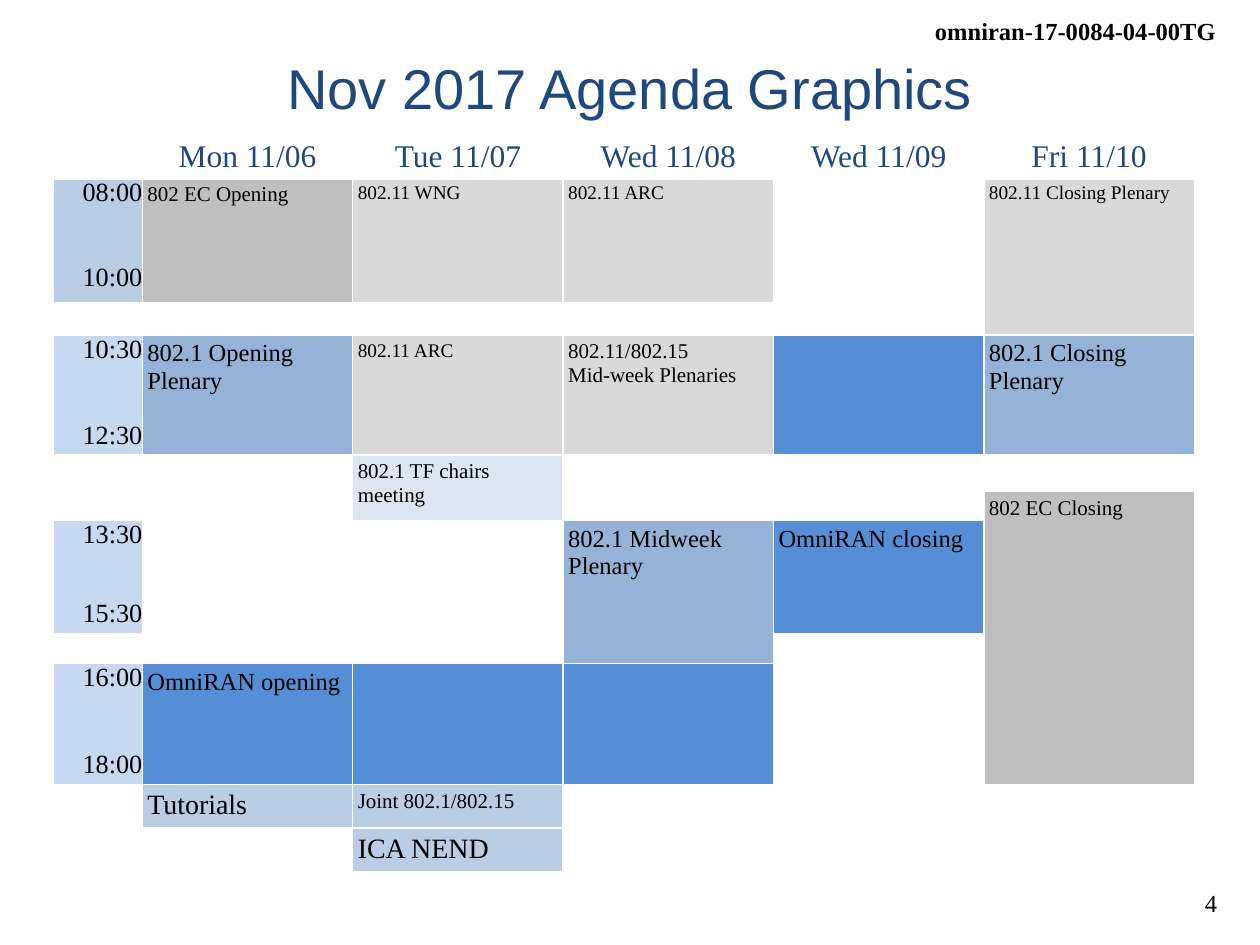
from lxml.etree import SubElement
from pptx import Presentation
from pptx.dml.color import RGBColor
from pptx.enum.text import MSO_ANCHOR, PP_ALIGN
from pptx.oxml.ns import qn
from pptx.util import Inches, Pt

COLORS = {
    "white": "FFFFFF", "black": "000000", "navy": "1F497D",
    "plenary": "BFBFBF", "wireless": "D9D9D9", "bridging": "95B3D7",
    "omniran": "558ED5", "chairs": "DCE6F2", "evening": "B9CDE5",
    "hours": "C6D9F1",
}
SERIF, SANS = "Times New Roman", "Arial"
DAYS = ["Mon 11/06", "Tue 11/07", "Wed 11/08", "Wed 11/09", "Fri 11/10"]
COLUMN_WIDTHS = [0.71] + [1.67] * len(DAYS)
ROW_HEIGHTS = [0.29, 0.99, 0.26, 0.92, 0.29, 0.23, 0.25, 0.61, 0.24, 0.92, 0.33, 0.33]

# row, first time, last time, fill, gap in points
HOURS = [
    (1, "08:00", "10:00", "evening", 32.5),
    (3, "10:30", "12:30", "hours", 32.5),
    (6, "13:30", "15:30", "hours", 28.5),
    (9, "16:00", "18:00", "hours", 33),
]
# row, column, text, size, fill
SESSIONS = [
    (1, 1, "802 EC Opening", 12, "plenary"),
    (1, 2, "802.11 WNG", 11, "wireless"),
    (1, 3, "802.11 ARC", 11, "wireless"),
    (1, 5, "802.11 Closing Plenary", 11, "wireless"),
    (3, 1, "802.1 Opening Plenary", 14, "bridging"),
    (3, 2, "802.11 ARC", 11, "wireless"),
    (3, 3, "802.11/802.15 \vMid-week Plenaries", 12, "wireless"),
    (3, 4, "", 14, "omniran"),
    (3, 5, "802.1 Closing Plenary", 14, "bridging"),
    (4, 2, "802.1 TF chairs meeting", 12, "chairs"),
    (5, 5, "802 EC Closing", 12, "plenary"),
    (6, 3, "802.1 Midweek Plenary", 14, "bridging"),
    (6, 4, "OmniRAN closing", 14, "omniran"),
    (9, 1, "OmniRAN opening", 14, "omniran"),
    (9, 2, "", 14, "omniran"),
    (9, 3, "", 14, "omniran"),
    (10, 1, "Tutorials", 16, "evening"),
    (10, 2, "Joint 802.1/802.15", 12, "evening"),
    (11, 2, "ICA NEND", 16, "evening"),
]
# (row, column): rows covered
ROW_SPANS = {
    (1, 5): 2, (4, 0): 2, (4, 1): 3, (4, 2): 2, (4, 3): 2, (4, 4): 2,
    (5, 5): 5, (6, 0): 2, (6, 2): 2, (6, 3): 3, (6, 4): 2,
    (10, 0): 2, (10, 3): 2, (10, 4): 2,
}


def rgb(name):
    return RGBColor.from_string(COLORS[name])


def write(paragraph, text, size=14, font=SERIF, color="black", bold=False,
          align=PP_ALIGN.LEFT, before=0):
    paragraph.text = text
    paragraph.alignment = align
    paragraph.space_before = Pt(before)
    for run in paragraph.runs:
        run.font.size = Pt(size)
        run.font.name = font
        run.font.bold = bold
        run.font.color.rgb = rgb(color)


class AgendaSlide:
    def __init__(self, deck):
        self.slide = deck.slides.add_slide(deck.slide_layouts[5])

    def title(self, text, left, top, width, height):
        heading = self.slide.shapes.title
        heading.left, heading.top = Inches(left), Inches(top)
        heading.width, heading.height = Inches(width), Inches(height)
        heading.text_frame.vertical_anchor = MSO_ANCHOR.MIDDLE
        write(heading.text_frame.paragraphs[0], text, size=32, font=SANS,
              color="navy", align=PP_ALIGN.CENTER)

    def label(self, text, left, top, width, height, **style):
        box = self.slide.shapes.add_textbox(
            Inches(left), Inches(top), Inches(width), Inches(height))
        box.text_frame.word_wrap = False
        write(box.text_frame.paragraphs[0], text, align=PP_ALIGN.RIGHT, **style)

    def grid(self, left, top, widths, heights):
        table = self.slide.shapes.add_table(
            len(heights), len(widths), Inches(left), Inches(top),
            Inches(sum(widths)), Inches(sum(heights))).table
        table.first_row = table.horz_banding = False
        for column, width in zip(table.columns, widths):
            column.width = Inches(width)
        for index, (row, height) in enumerate(zip(table.rows, heights)):
            row.height = Inches(height)
            for cell in row.cells:
                self.blank(cell, bottom=3 if index == 0 else 1)
        return table

    def blank(self, cell, bottom):
        self.pad(cell, 0)
        properties = cell._tc.get_or_add_tcPr()
        for side, weight in {"L": 1, "R": 1, "T": 1, "B": bottom}.items():
            line = SubElement(properties, qn(f"a:ln{side}"), w=str(Pt(weight)))
            solid = SubElement(line, qn("a:solidFill"))
            SubElement(solid, qn("a:srgbClr"), val=COLORS["white"])
        self.paint(cell, "white")
        ending = cell.text_frame.paragraphs[0]._p.get_or_add_endParaRPr()
        ending.set("sz", "800")

    def paint(self, cell, color):
        cell.fill.solid()
        cell.fill.fore_color.rgb = rgb(color)

    def pad(self, cell, inset):
        cell.margin_left = cell.margin_right = Inches(inset)
        cell.margin_top = cell.margin_bottom = Inches(inset)

    def day(self, cell, text):
        write(cell.text_frame.paragraphs[0], text, size=18, color="navy",
              align=PP_ALIGN.CENTER)

    def hours(self, cell, start, end, color, gap):
        self.paint(cell, color)
        frame = cell.text_frame
        write(frame.paragraphs[0], start, size=15, align=PP_ALIGN.RIGHT)
        write(frame.add_paragraph(), end, size=15, align=PP_ALIGN.RIGHT, before=gap)

    def session(self, cell, text, size, color):
        self.paint(cell, color)
        self.pad(cell, 0.04)
        if text:
            write(cell.text_frame.paragraphs[0], text, size=size)


def main():
    deck = Presentation()
    deck.slide_width, deck.slide_height = Inches(10), Inches(7.5)
    agenda = AgendaSlide(deck)
    agenda.label("omniran-17-0084-04-00TG", 7.3, 0.08, 2.45, 0.34, bold=True)
    agenda.label("4", 9.33, 7, 0.43, 0.34)
    agenda.title("Nov 2017 Agenda Graphics", 0.5, 0.3, 9, 0.78)

    week = agenda.grid(0.42, 1.11, COLUMN_WIDTHS, ROW_HEIGHTS)
    for (row, column), count in ROW_SPANS.items():
        week.cell(row, column).merge(week.cell(row + count - 1, column))
    for column, name in enumerate(DAYS, start=1):
        agenda.day(week.cell(0, column), name)
    for row, *period in HOURS:
        agenda.hours(week.cell(row, 0), *period)
    for row, column, *meeting in SESSIONS:
        agenda.session(week.cell(row, column), *meeting)
    deck.save("out.pptx")


if __name__ == "__main__":
    main()
